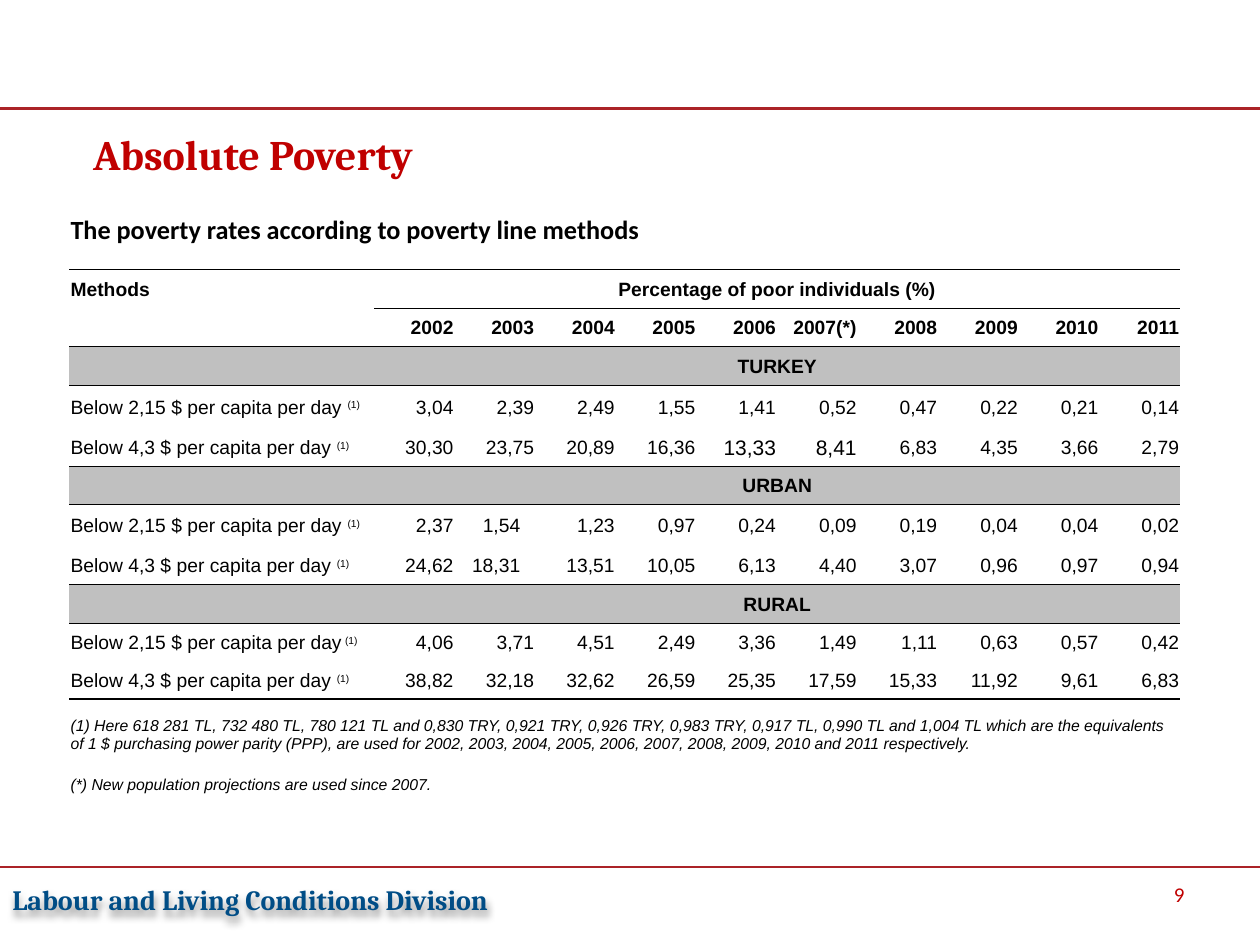
from dataclasses import dataclass

from lxml import etree
from pptx import Presentation
from pptx.dml.color import RGBColor
from pptx.enum.shapes import MSO_CONNECTOR
from pptx.enum.text import MSO_ANCHOR, PP_ALIGN
from pptx.oxml import parse_xml
from pptx.oxml.ns import qn
from pptx.util import Inches, Pt

LEFT, CENTER, RIGHT = PP_ALIGN.LEFT, PP_ALIGN.CENTER, PP_ALIGN.RIGHT
TOP, MIDDLE, BOTTOM = MSO_ANCHOR.TOP, MSO_ANCHOR.MIDDLE, MSO_ANCHOR.BOTTOM
STRAIGHT = MSO_CONNECTOR.STRAIGHT

BLACK = RGBColor(0x00, 0x00, 0x00)
RED = RGBColor(0xC0, 0x00, 0x00)
RULE_RED = RGBColor(0xAB, 0x23, 0x28)
NAVY = RGBColor(0x00, 0x4D, 0x86)
GREY = RGBColor(0xC0, 0xC0, 0xC0)

A_NS = "http://schemas.openxmlformats.org/drawingml/2006/main"
NO_STYLE = "{2D5ABB26-0587-4C30-8999-92F81FD0307C}"
THIN, THICK = 0.5, 1

BODY = dict(name="Arial", size=Pt(11), color=BLACK)
HEAD = dict(BODY, bold=True)
LARGE = dict(BODY, size=Pt(12))
NOTE = dict(BODY, size=Pt(10))
FOOTNOTE = dict(BODY, size=Pt(9), italic=True)
CAPTION = dict(HEAD, name="Calibri", size=Pt(15))

COLS = [2.42, 0.64, 0.53, 0.11] + [0.64] * 8
ROWS = [0.27, 0.18, 0.31, 0.30, 0.31, 0.34, 0.30, 0.30, 0.34, 0.30,
        0.31, 0.30, 0.30, 0.56, 0.19]
LAST = len(COLS) - 1
YEARS = "2002 2003 2004 2005 2006 2007(*) 2008 2009 2010 2011".split()
LOW = "Below 2,15 $ per capita per day"
HIGH = "Below 4,3 $ per capita per day"


@dataclass
class Section:
    name: str
    low: str
    high: str
    split: int = 2  # first of the two narrow columns that are merged
    low_runs: tuple = (LOW + " ", "(1)")
    large: tuple = ()  # values set in the larger size


SECTIONS = [
    Section("TURKEY",
            "3,04 2,39 2,49 1,55 1,41 0,52 0,47 0,22 0,21 0,14",
            "30,30 23,75 20,89 16,36 13,33 8,41 6,83 4,35 3,66 2,79",
            large=("13,33", "8,41")),
    Section("URBAN",
            "2,37 1,54 1,23 0,97 0,24 0,09 0,19 0,04 0,04 0,02",
            "24,62 18,31 13,51 10,05 6,13 4,40 3,07 0,96 0,97 0,94",
            split=3),
    Section("RURAL",
            "4,06 3,71 4,51 2,49 3,36 1,49 1,11 0,63 0,57 0,42",
            "38,82 32,18 32,62 26,59 25,35 17,59 15,33 11,92 9,61 6,83",
            low_runs=(LOW, " (1)")),
]


def add_run(p, text: str, fmt: dict):
    r = p.add_run()
    r.text = text
    for key, value in fmt.items():
        if key == "color":
            r.font.color.rgb = value
        else:
            setattr(r.font, key, value)
    return r


def add_text(slide, box: tuple, text: str, fmt: dict, align=LEFT, anchor=TOP):
    sp = slide.shapes.add_textbox(*map(Inches, box))
    tf = sp.text_frame
    tf.word_wrap = True
    tf.vertical_anchor = anchor
    p = tf.paragraphs[0]
    p.alignment = align
    add_run(p, text, fmt)
    return sp


def add_rule(slide, y: float) -> None:
    line = slide.shapes.add_connector(STRAIGHT, 0, Inches(y), Inches(10), Inches(y))
    line.line.color.rgb = RULE_RED
    line.line.width = Pt(1.5)
    etree.SubElement(line._element.spPr, qn("a:effectLst"))


def set_border(cell, side: str, width: float) -> None:
    cell._tc.get_or_add_tcPr().append(parse_xml(
        f'<a:ln{side} xmlns:a="{A_NS}" w="{int(Pt(width))}"><a:solidFill>'
        f'<a:srgbClr val="{BLACK}"/></a:solidFill></a:ln{side}>'))


def border_row(table, row: int, top: float = 0, bottom: float = 0, first: int = 0) -> None:
    for col in range(first, len(COLS)):
        for side, width in (("T", top), ("B", bottom)):
            if width:
                set_border(table.cell(row, col), side, width)


def fill_cell(table, row: int, col: int, text: str, fmt: dict, align=LEFT,
              last: int = 0, anchor=MIDDLE):
    cell = table.cell(row, col)
    if last > col:
        cell.merge(table.cell(row, last))
    cell.vertical_anchor = anchor
    p = cell.text_frame.paragraphs[0]
    p.alignment = align
    add_run(p, text, fmt)
    return p


def fill_values(table, row: int, values: list, fmt: dict, split: int = 2,
                large: tuple = ()) -> None:
    col = 1
    for value in values:
        last = col + 1 if col == split else col
        fill_cell(table, row, col, value, LARGE if value in large else fmt, RIGHT, last)
        col = last + 1


def add_section(table, row: int, section: Section, end: float) -> None:
    border_row(table, row, THIN, THIN)
    for col in range(len(COLS)):
        fill = table.cell(row, col).fill
        fill.solid()
        fill.fore_color.rgb = GREY
    fill_cell(table, row, 1, section.name, HEAD, CENTER, LAST)
    lines = ((section.low_runs, section.low), ((HIGH + " ", "(1)"), section.high))
    for i, ((label, note), values) in enumerate(lines, row + 1):
        p = fill_cell(table, i, 0, label, BODY)
        r = add_run(p, note, NOTE)
        r.font._element.set("baseline", "30000")
        fill_values(table, i, values.split(), BODY, section.split, section.large)
    border_row(table, row + 2, bottom=end)


def add_poverty_table(slide) -> None:
    frame = slide.shapes.add_table(len(ROWS), len(COLS), Inches(0.55), Inches(1.69),
                                   Inches(sum(COLS)), Inches(sum(ROWS)))
    table = frame.table
    table.first_row = table.horz_banding = False
    table._tbl.tblPr.find(qn("a:tableStyleId")).text = NO_STYLE
    for column, width in zip(table.columns, COLS):
        column.width = Inches(width)
    for row, height in zip(table.rows, ROWS):
        row.height = Inches(height)
    for cell in table.iter_cells():
        cell.margin_left = cell.margin_right = cell.margin_top = Inches(0.01)
        cell.margin_bottom = 0
        cell.fill.background()
        # Small end mark keeps empty cells from stretching their row
        p = cell.text_frame.paragraphs[0]
        etree.SubElement(p._p, qn("a:endParaRPr"), sz="900")

    # Caption and header
    fill_cell(table, 0, 0, "The poverty rates according to poverty line methods",
              CAPTION, last=5)
    table.cell(1, 2).merge(table.cell(1, 3))
    border_row(table, 1, bottom=THICK)
    fill_cell(table, 2, 0, "Methods", HEAD)
    fill_cell(table, 2, 1, "Percentage of poor individuals (%)", HEAD, CENTER, LAST)
    border_row(table, 2, bottom=THIN, first=1)
    fill_values(table, 3, YEARS, HEAD)

    # Sections
    for i, section in enumerate(SECTIONS):
        add_section(table, 4 + 3 * i, section, THICK if i == 2 else THIN)

    # Footnotes
    fill_cell(table, 13, 0,
              "(1) Here 618 281 TL, 732 480 TL, 780 121 TL and 0,830 TRY, 0,921 TRY, "
              "0,926 TRY, 0,983 TRY, 0,917 TL, 0,990 TL and 1,004 TL which are the "
              "equivalents of 1 $ purchasing power parity (PPP), are used for 2002, "
              "2003, 2004, 2005, 2006, 2007, 2008, 2009, 2010 and 2011 respectively.",
              FOOTNOTE, last=LAST)
    fill_cell(table, 14, 0, "(*) New population projections are used since 2007.",
              FOOTNOTE, last=3, anchor=BOTTOM)


def main() -> None:
    prs = Presentation()
    prs.slide_width, prs.slide_height = Inches(10), Inches(7.5)
    s = prs.slides.add_slide(prs.slide_layouts[6])

    # Frame and footer
    for y in (0.86, 6.88):
        add_rule(s, y)
    footer = add_text(s, (0, 6.95, 8.58, 0.37), "Labour and Living Conditions Division",
                      dict(name="Cambria", size=Pt(16), bold=True, color=NAVY),
                      anchor=MIDDLE)
    footer._element.spPr.append(parse_xml(
        f'<a:effectLst xmlns:a="{A_NS}"><a:outerShdw blurRad="50800" dist="38100" '
        'dir="5400000"><a:srgbClr val="000000"><a:alpha val="40000"/></a:srgbClr>'
        '</a:outerShdw></a:effectLst>'))
    add_text(s, (7.17, 6.95, 2.33, 0.4), "9",
             dict(name="Calibri", size=Pt(12), color=RED), RIGHT)

    # Title and table
    title = add_text(s, (0.64, 1.02, 8.85, 0.46), "Absolute Poverty",
                     dict(name="Cambria", size=Pt(24), bold=True, color=RED))
    title.text_frame.paragraphs[0].line_spacing = 0.9
    add_poverty_table(s)
    prs.save("out.pptx")


if __name__ == "__main__":
    main()
